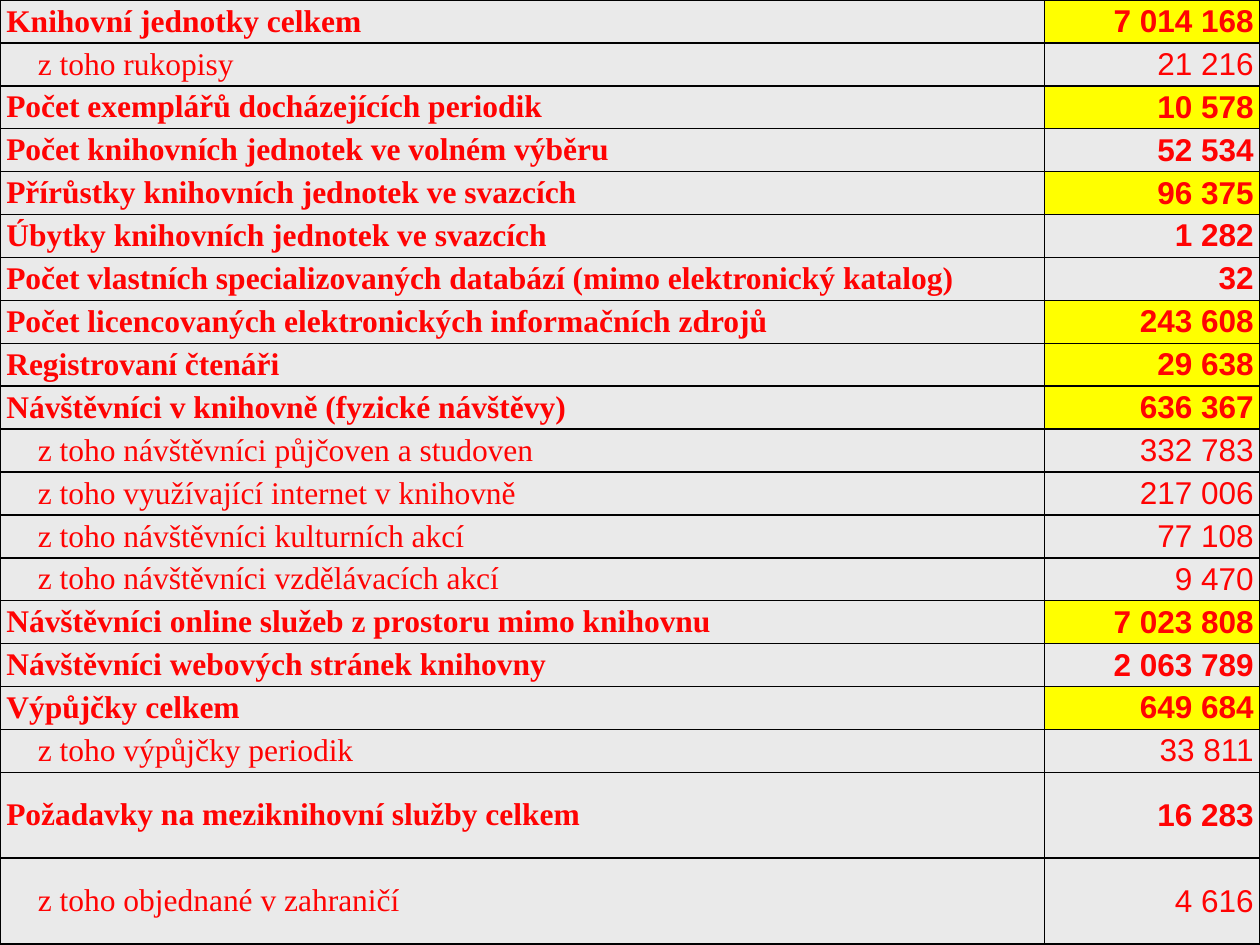
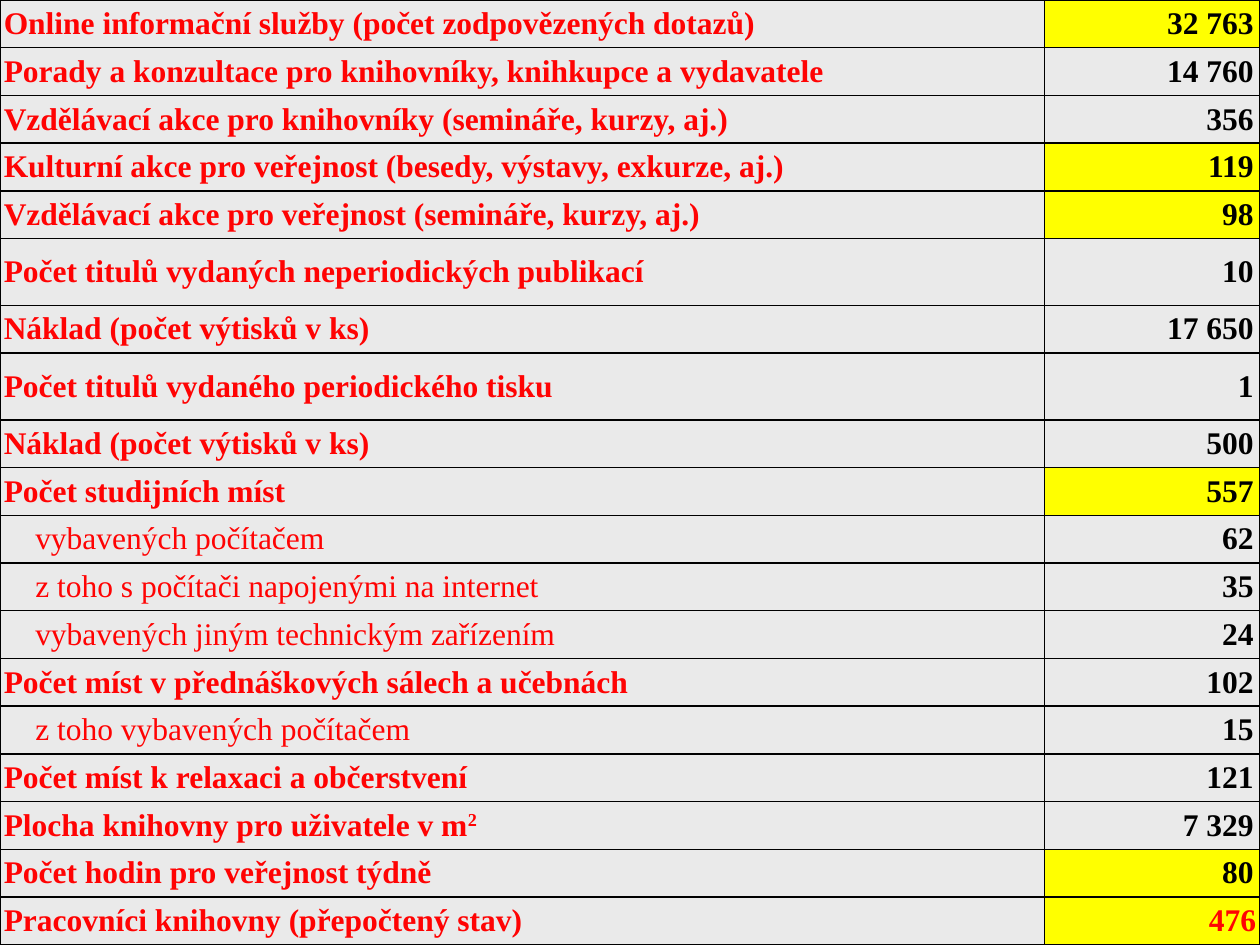
from dataclasses import dataclass

from lxml.etree import SubElement
from pptx import Presentation
from pptx.dml.color import RGBColor
from pptx.enum.text import MSO_ANCHOR, PP_ALIGN
from pptx.oxml.ns import qn
from pptx.util import Inches, Pt


@dataclass(frozen=True)
class Theme:
    background: str = "EAEAEA"
    highlight: str = "FFFF00"
    red: str = "FF0303"
    black: str = "000000"
    serif: str = "Times New Roman"
    sans: str = "Arial"
    text_size: int = 18
    border_width: int = 1
    margin: float = 0.05
    tight_margin: float = 0.03
    sub_indent: float = 0.25


@dataclass(frozen=True)
class Row:
    label: str
    value: str
    highlight: bool = False
    sub: bool = False
    height_units: float = 1
    superscript: str = ""


@dataclass(frozen=True)
class ValueStyle:
    font: str
    color: str
    margin: float
    bold_sub: bool


THEME = Theme()
WIDTH, HEIGHT = 10, 7.5
LABEL_WIDTH = 8.29

COLLECTION_ROWS = [
    Row("Knihovní jednotky celkem", "7 014 168", highlight=True),
    Row("z toho rukopisy", "21 216", sub=True),
    Row("Počet exemplářů docházejících periodik", "10 578", highlight=True),
    Row("Počet knihovních jednotek ve volném výběru", "52 534"),
    Row("Přírůstky knihovních jednotek ve svazcích", "96 375", highlight=True),
    Row("Úbytky knihovních jednotek ve svazcích", "1 282"),
    Row("Počet vlastních specializovaných databází (mimo elektronický katalog)", "32"),
    Row("Počet licencovaných elektronických informačních zdrojů", "243 608", highlight=True),
    Row("Registrovaní čtenáři", "29 638", highlight=True),
    Row("Návštěvníci v knihovně (fyzické návštěvy)", "636 367", highlight=True),
    Row("z toho návštěvníci půjčoven a studoven", "332 783", sub=True),
    Row("z toho využívající internet v knihovně", "217 006", sub=True),
    Row("z toho návštěvníci kulturních akcí", "77 108", sub=True),
    Row("z toho návštěvníci vzdělávacích akcí", "9 470", sub=True),
    Row("Návštěvníci online služeb z prostoru mimo knihovnu", "7 023 808", highlight=True),
    Row("Návštěvníci webových stránek knihovny", "2 063 789"),
    Row("Výpůjčky celkem", "649 684", highlight=True),
    Row("z toho výpůjčky periodik", "33 811", sub=True),
    Row("Požadavky na meziknihovní služby celkem", "16 283", height_units=2),
    Row("z toho objednané v zahraničí", "4 616", sub=True, height_units=2),
]

SERVICE_ROWS = [
    Row("Online informační služby (počet zodpovězených dotazů)", "32 763", highlight=True),
    Row("Porady a konzultace pro knihovníky, knihkupce a vydavatele", "14 760"),
    Row("Vzdělávací akce pro knihovníky (semináře, kurzy, aj.)", "356"),
    Row("Kulturní akce pro veřejnost (besedy, výstavy, exkurze, aj.)", "119", highlight=True),
    Row("Vzdělávací akce pro veřejnost (semináře, kurzy, aj.)", "98", highlight=True),
    Row("Počet titulů vydaných neperiodických publikací", "10", height_units=1.4),
    Row("Náklad (počet výtisků v ks)", "17 650"),
    Row("Počet titulů vydaného periodického tisku", "1", height_units=1.4),
    Row("Náklad (počet výtisků v ks)", "500"),
    Row("Počet studijních míst", "557", highlight=True),
    Row("vybavených počítačem", "62", sub=True),
    Row("z toho s počítači napojenými na internet", "35", sub=True),
    Row("vybavených jiným technickým zařízením", "24", sub=True),
    Row("Počet míst v přednáškových sálech a učebnách", "102"),
    Row("z toho vybavených počítačem", "15", sub=True),
    Row("Počet míst k relaxaci a občerstvení", "121"),
    Row("Plocha knihovny pro uživatele v m", "7 329", superscript="2"),
    Row("Počet hodin pro veřejnost týdně", "80", highlight=True),
    Row("Pracovníci knihovny (přepočtený stav)", "476", highlight=True),
]


class Deck:
    def __init__(self, theme):
        self.theme = theme
        self.presentation = Presentation()
        self.presentation.slide_width = Inches(WIDTH)
        self.presentation.slide_height = Inches(HEIGHT)
        self.slide = None

    def add_slide(self):
        self.slide = self.presentation.slides.add_slide(self.presentation.slide_layouts[6])
        fill = self.slide.background.fill
        fill.solid()
        fill.fore_color.rgb = RGBColor.from_string(self.theme.background)

    def border(self, cell):
        properties = cell._tc.get_or_add_tcPr()
        for side in ("a:lnL", "a:lnR", "a:lnT", "a:lnB"):
            line = SubElement(properties, qn(side), w=str(Pt(self.theme.border_width)))
            SubElement(SubElement(line, qn("a:solidFill")), qn("a:srgbClr"), val=self.theme.black)

    def write_cell(self, cell, text, font, color, bold, alignment, margin, highlight=False):
        self.border(cell)
        if highlight:
            cell.fill.solid()
            cell.fill.fore_color.rgb = RGBColor.from_string(self.theme.highlight)
        else:
            cell.fill.background()
        cell.margin_left = cell.margin_right = Inches(margin)
        cell.margin_top = cell.margin_bottom = 0
        cell.vertical_anchor = MSO_ANCHOR.MIDDLE
        paragraph = cell.text_frame.paragraphs[0]
        paragraph.alignment = alignment
        paragraph.font.name = font
        paragraph.font.size = Pt(self.theme.text_size)
        paragraph.font.bold = bold
        paragraph.font.color.rgb = RGBColor.from_string(color)
        paragraph.add_run().text = text
        return paragraph

    def add_statistics_table(self, rows, label_margin, value_style, last_value_style=None):
        table = self.slide.shapes.add_table(
            len(rows), 2, 0, 0, Inches(WIDTH), Inches(HEIGHT)
        ).table
        table.first_row = table.horz_banding = False
        table.columns[0].width = Inches(LABEL_WIDTH)
        table.columns[1].width = Inches(WIDTH - LABEL_WIDTH)
        unit = HEIGHT / sum(row.height_units for row in rows)
        for index, row in enumerate(rows):
            table.rows[index].height = Inches(unit * row.height_units)
            label = self.write_cell(
                table.cell(index, 0), row.label, self.theme.serif, self.theme.red,
                not row.sub, PP_ALIGN.LEFT, label_margin,
            )
            if row.sub:
                label._p.get_or_add_pPr().set("marL", str(Inches(self.theme.sub_indent)))
            if row.superscript:
                run = label.add_run()
                run.text = row.superscript
                run._r.get_or_add_rPr().set("baseline", "30000")
            is_last = index == len(rows) - 1
            style = last_value_style if is_last and last_value_style else value_style
            self.write_cell(
                table.cell(index, 1), row.value, style.font, style.color,
                style.bold_sub or not row.sub, PP_ALIGN.RIGHT, style.margin, row.highlight,
            )

    def save(self):
        self.presentation.save("out.pptx")


def main():
    deck = Deck(THEME)
    deck.add_slide()
    deck.add_statistics_table(
        COLLECTION_ROWS, THEME.margin,
        ValueStyle(THEME.sans, THEME.red, THEME.margin, bold_sub=False),
    )
    deck.add_slide()
    deck.add_statistics_table(
        SERVICE_ROWS, THEME.tight_margin,
        ValueStyle(THEME.serif, THEME.black, THEME.margin, bold_sub=True),
        ValueStyle(THEME.serif, THEME.red, THEME.tight_margin, bold_sub=True),
    )
    deck.save()


if __name__ == "__main__":
    main()
